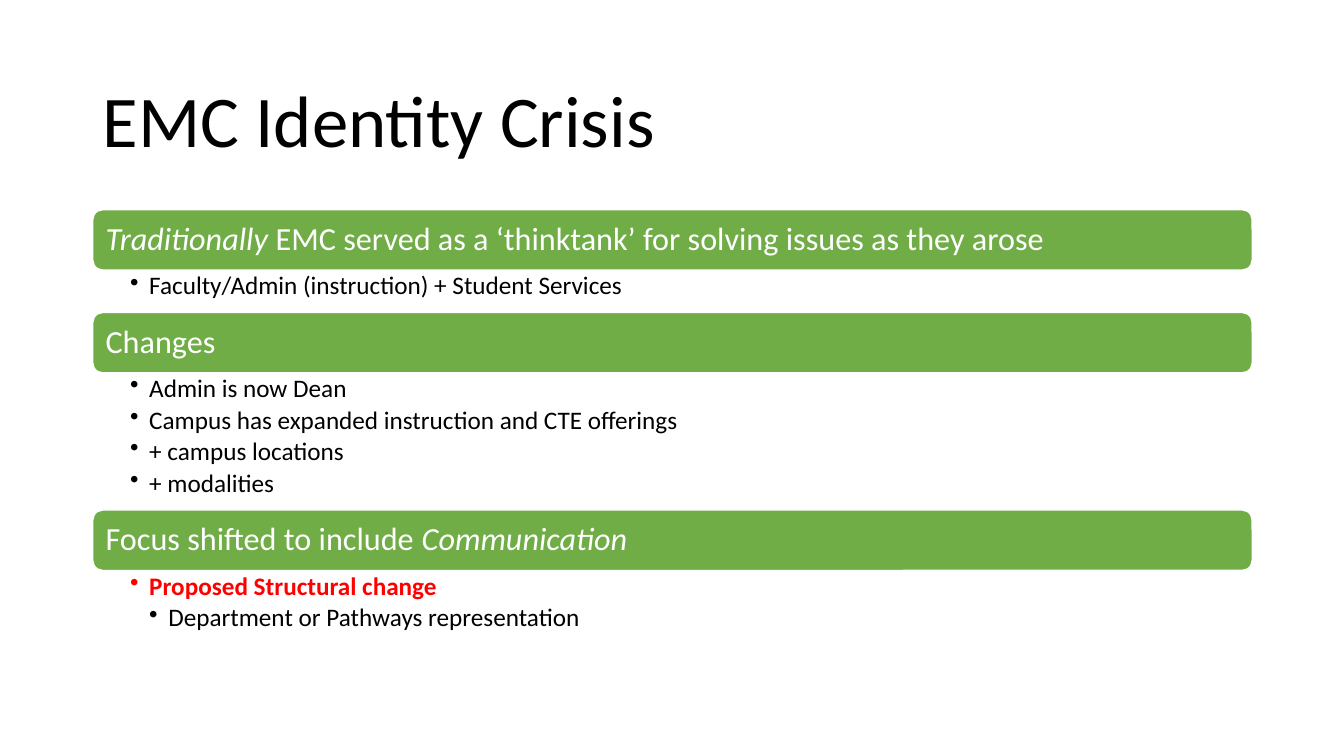
from lxml import etree
from pptx import Presentation, util as u
from pptx.dml.color import RGBColor
from pptx.enum import shapes, text
from pptx.oxml.ns import qn

WIDTH, HEIGHT = 13.33, 7.5
LEFT, SPAN = 0.92, 11.5
BAR, STEP = 0.6, 0.19
GREEN, WHITE, BLACK, RED = "70AD47", "FFFFFF", "000000", "FF0000"

TITLE = "EMC Identity Crisis"
SECTIONS = [
    ([("Traditionally ", True),
      ("EMC served as a ‘thinktank’ for solving issues as they arose", False)],
     0.42,
     [("Faculty/Admin (instruction) + Student Services", 1, BLACK, False)]),
    ([("Changes", False)],
     1.36,
     [("Admin is now Dean", 1, BLACK, False),
      ("Campus has expanded instruction and CTE offerings", 1, BLACK, False),
      ("+ campus locations", 1, BLACK, False),
      ("+ modalities", 1, BLACK, False)]),
    ([("Focus shifted to include ", False), ("Communication", True)],
     1.02,
     [("Proposed Structural change", 1, RED, True),
      ("Department or Pathways representation", 2, BLACK, False)]),
]


def color(value):
    return RGBColor.from_string(value)


def assign(target, values):
    for key, value in values.items():
        setattr(target, key, value)


def set_frame(frame, left, top, right, bottom, anchor):
    assign(frame, {"word_wrap": True, "vertical_anchor": anchor,
                   "margin_left": u.Inches(left), "margin_top": u.Inches(top),
                   "margin_right": u.Inches(right), "margin_bottom": u.Inches(bottom)})


def add_run(paragraph, words, size, tint, **style):
    run = paragraph.add_run()
    run.text = words
    assign(run.font, {"name": "Calibri", "size": u.Pt(size), **style})
    run.font.color.rgb = color(tint)


def add_bullet(paragraph, level):
    properties = paragraph._p.get_or_add_pPr()
    properties.set("marL", str(u.Inches(STEP * level)))
    properties.set("indent", str(-u.Inches(STEP)))
    etree.SubElement(properties, qn("a:buChar")).set("char", "•")


def add_box(slide, top, height):
    return slide.shapes.add_textbox(*map(u.Inches, (LEFT, top, SPAN, height))).text_frame


def add_title(slide):
    title = add_box(slide, 0.61, 1.24)
    set_frame(title, 0.1, 0.05, 0.1, 0.05, text.MSO_ANCHOR.MIDDLE)
    title.paragraphs[0].line_spacing = 0.9
    add_run(title.paragraphs[0], TITLE, 52, BLACK)


def add_heading(slide, top, parts):
    bar = slide.shapes.add_shape(shapes.MSO_SHAPE.ROUNDED_RECTANGLE,
                                 *map(u.Inches, (LEFT, top, SPAN, BAR)))
    bar.shadow.inherit = False
    bar.fill.solid()
    bar.fill.fore_color.rgb = color(GREEN)
    bar.line.color.rgb = color(WHITE)
    bar.line.width = u.Pt(1)
    set_frame(bar.text_frame, 0.1, 0.1, 0.1, 0.1, text.MSO_ANCHOR.MIDDLE)
    heading = bar.text_frame.paragraphs[0]
    assign(heading, {"alignment": text.PP_ALIGN.LEFT, "line_spacing": 0.9})
    for words, italic in parts:
        add_run(heading, words, 23, WHITE, italic=italic)


def add_details(slide, top, height, items):
    details = add_box(slide, top, height)
    set_frame(details, 0.37, 0.03, 0.18, 0.03, text.MSO_ANCHOR.TOP)
    for index, (words, level, tint, bold) in enumerate(items):
        item = details.add_paragraph() if index else details.paragraphs[0]
        add_bullet(item, level)
        assign(item, {"level": level, "line_spacing": 0.9, "space_after": u.Pt(3)})
        add_run(item, words, 18, tint, bold=bold)


def main():
    deck = Presentation()
    assign(deck, {"slide_width": u.Inches(WIDTH), "slide_height": u.Inches(HEIGHT)})
    slide = deck.slides.add_slide(deck.slide_layouts[6])
    add_title(slide)
    top = 2.08
    for parts, height, items in SECTIONS:
        add_heading(slide, top, parts)
        add_details(slide, top + BAR, height, items)
        top += BAR + height
    deck.save("out.pptx")


if __name__ == "__main__":
    main()
